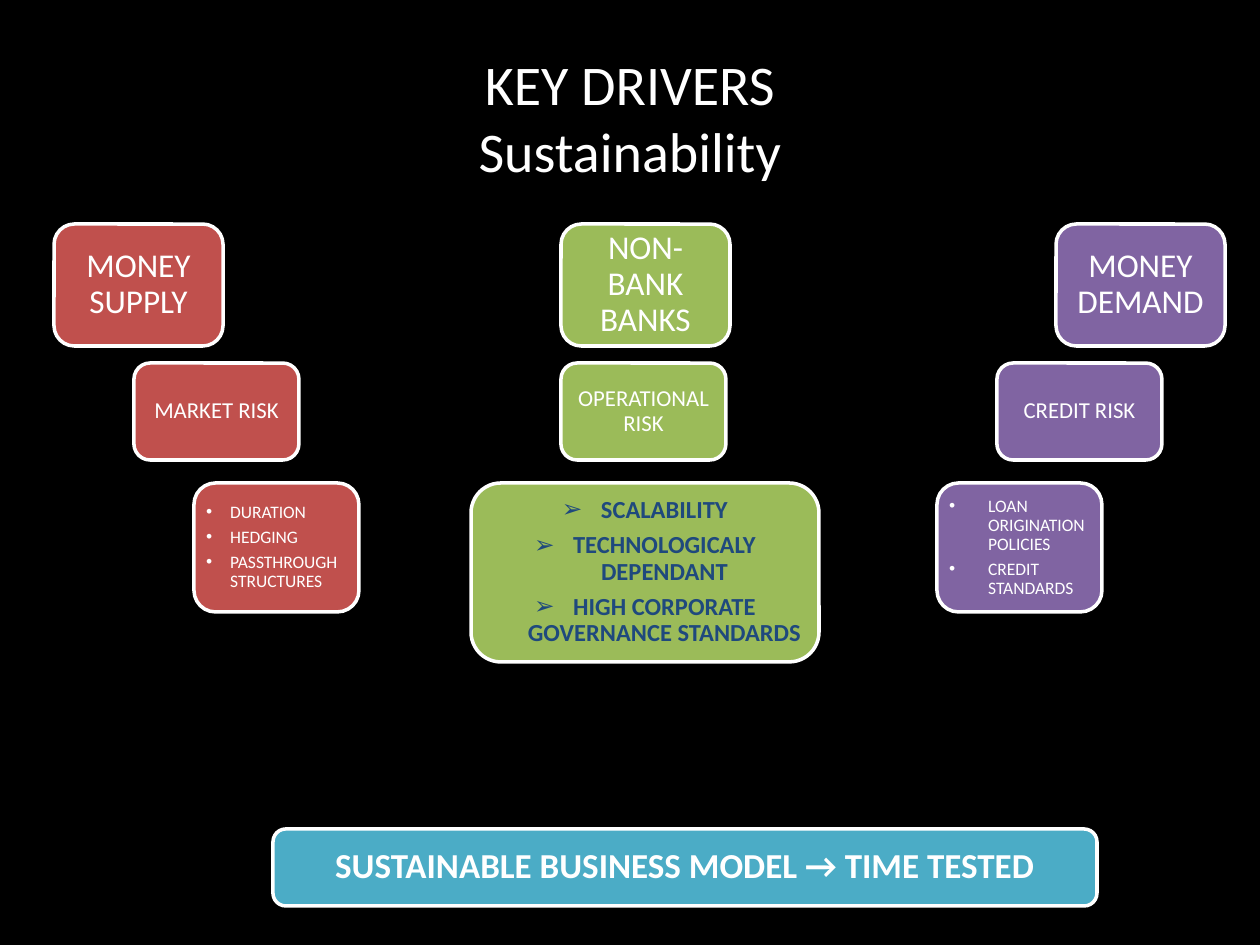
import pptx
import pptx.util
import pptx.dml.color
import pptx.enum.shapes
import pptx.enum.text
import pptx.oxml
import pptx.oxml.ns
from lxml import etree

Color = pptx.dml.color.RGBColor
Align = pptx.enum.text.PP_ALIGN
BLACK = Color(0x00, 0x00, 0x00)
WHITE = Color(0xFF, 0xFF, 0xFF)
RED = Color(0xC0, 0x50, 0x4D)
GREEN = Color(0x9B, 0xBB, 0x59)
PURPLE = Color(0x80, 0x64, 0xA2)
TEAL = Color(0x4B, 0xAC, 0xC6)
NAVY = Color(0x1F, 0x49, 0x7D)


def px(length):
    """Turn px (126 to the inch) into EMU."""
    return pptx.util.Emu(round(length * 914400 / 126))


class SlideBuilder:
    font_name = "Calibri"

    def __init__(self, page):
        self.page = page

    def style(self, para, size, color, bold=False, align=Align.CENTER):
        para.alignment = align
        para.font.name = self.font_name
        para.font.size = pptx.util.Pt(size)
        para.font.bold = bold
        para.font.color.rgb = color

    def title(self, text, left, top, width, height, size):
        box = self.page.shapes.add_textbox(px(left), px(top), px(width), px(height))
        box.text_frame.word_wrap = True
        box.text_frame.vertical_anchor = pptx.enum.text.MSO_ANCHOR.MIDDLE
        para = box.text_frame.paragraphs[0]
        para.text = text
        self.style(para, size, WHITE)

    def bullet(self, para, mark, indent):
        properties = para._p.get_or_add_pPr()
        properties.set("marL", str(px(indent)))
        properties.set("indent", str(-px(indent)))
        etree.SubElement(properties, pptx.oxml.ns.qn("a:buFont")).set("typeface", "Arial")
        etree.SubElement(properties, pptx.oxml.ns.qn("a:buChar")).set("char", mark)
        # The default run properties must come after the bullet
        properties.append(properties.find(pptx.oxml.ns.qn("a:defRPr")))

    def card(self, lines, left, top, width, height, fill, size, inset=(6, 6),
             color=WHITE, bold=False, align=Align.CENTER, mark=None, indent=0):
        box = self.page.shapes.add_shape(
            pptx.enum.shapes.MSO_SHAPE.ROUNDED_RECTANGLE,
            px(left), px(top), px(width), px(height))
        box.shadow.inherit = False
        box.fill.solid()
        box.fill.fore_color.rgb = fill
        box.line.color.rgb = WHITE
        box.line.width = pptx.util.Pt(2)
        frame = box.text_frame
        frame.word_wrap = True
        frame.vertical_anchor = pptx.enum.text.MSO_ANCHOR.MIDDLE
        frame.margin_left = frame.margin_right = px(inset[0])
        frame.margin_top = frame.margin_bottom = px(inset[1])
        for index, line in enumerate(lines):
            para = frame.add_paragraph() if index else frame.paragraphs[0]
            para.text = line
            para.line_spacing = 0.9
            para.space_after = pptx.util.Pt(round(0.35 * size, 1))
            self.style(para, size, color, bold, align)
            if mark:
                self.bullet(para, mark, indent)


def main():
    deck = pptx.Presentation()
    deck.slide_width, deck.slide_height = px(1260), px(945)
    page = deck.slides.add_slide(deck.slide_layouts[6])
    page.background.fill.solid()
    page.background.fill.fore_color.rgb = BLACK
    builder = SlideBuilder(page)

    builder.title("KEY DRIVERS\vSustainability", 63, 38, 1134, 157, 32)

    # Drivers, each with its risk below
    columns = [
        (RED, "MONEY SUPPLY", 54, "MARKET RISK", 134),
        (GREEN, "NON-BANK BANKS", 561, "OPERATIONAL RISK", 561),
        (PURPLE, "MONEY DEMAND", 1056, "CREDIT RISK", 997),
    ]
    for fill, driver, driver_left, risk, risk_left in columns:
        builder.card([driver], driver_left, 224, 169, 122, fill, 19, inset=(10, 5))
        builder.card([risk], risk_left, 363, 165, 97, fill, 13)

    # Details of each risk
    builder.card(["DURATION", "HEDGING", "PASSTHROUGH STRUCTURES"],
                 194, 483, 165, 129, RED, 10, align=Align.LEFT, mark="•", indent=24)
    builder.card(["LOAN ORIGINATION POLICIES", "CREDIT STANDARDS"],
                 937, 483, 165, 129, PURPLE, 10, align=Align.LEFT, mark="•", indent=39)
    builder.card(["SCALABILITY", "TECHNOLOGICALY DEPENDANT",
                  "HIGH CORPORATE GOVERNANCE STANDARDS"],
                 471, 483, 348, 179, GREEN, 14, color=NAVY, bold=True,
                 mark="➢", indent=39)

    # Conclusion banner
    builder.card(["SUSTAINABLE BUSINESS MODEL → TIME TESTED"],
                 273, 829, 824, 77, TEAL, 20, bold=True)

    deck.save("out.pptx")


if __name__ == "__main__":
    main()
